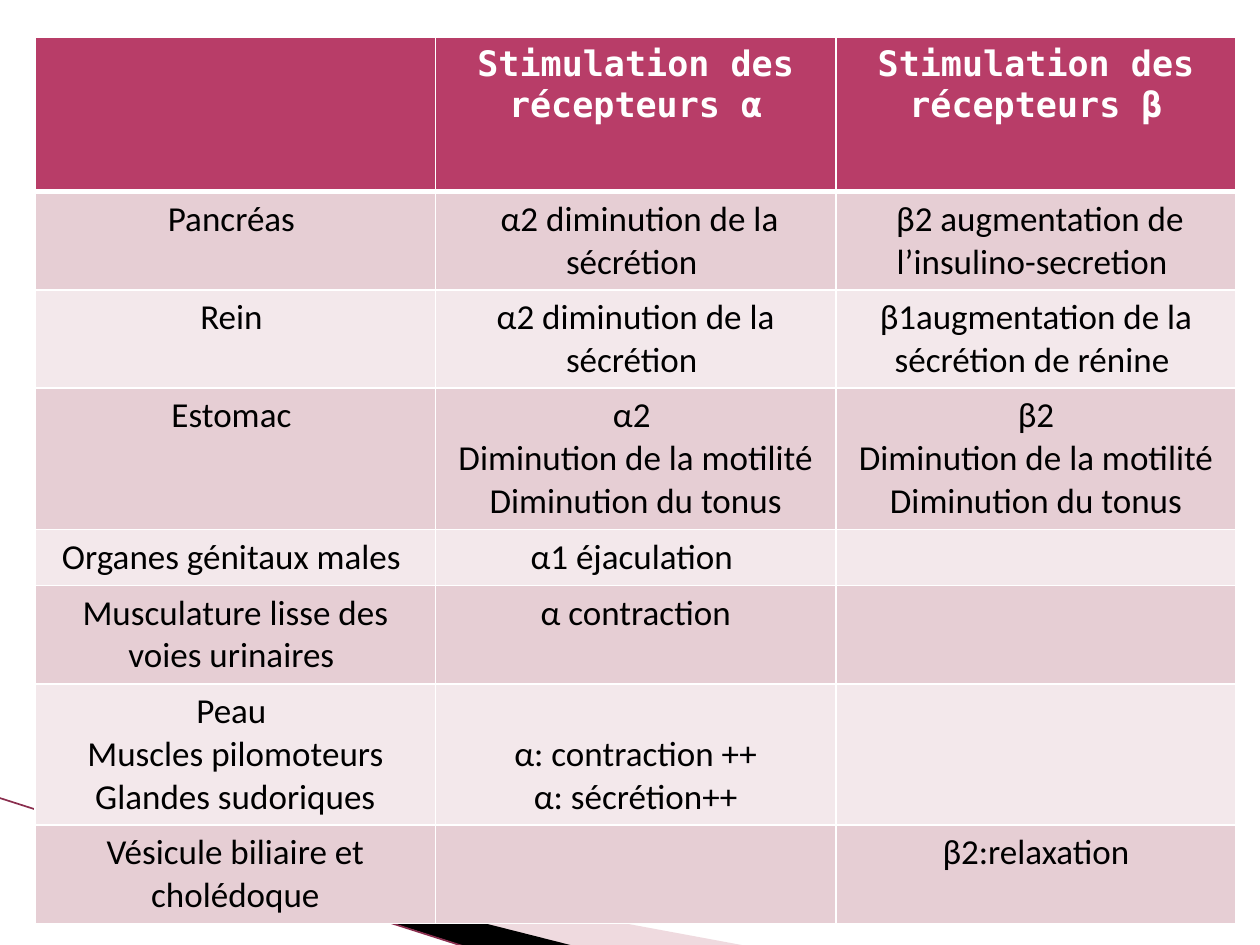
"""Build a slide comparing alpha and beta receptor stimulation by organ."""
from dataclasses import dataclass

from lxml import etree
from pptx import Presentation
from pptx.dml.color import RGBColor
from pptx.enum.shapes import MSO_CONNECTOR
from pptx.enum.text import MSO_ANCHOR, PP_ALIGN
from pptx.oxml.ns import qn
from pptx.util import Cm, Pt

CENTER = PP_ALIGN.CENTER
TOP, BOTTOM = MSO_ANCHOR.TOP, MSO_ANCHOR.BOTTOM
STRAIGHT = MSO_CONNECTOR.STRAIGHT


@dataclass(frozen=True)
class Theme:
    header: str = "B83D68"
    bands: tuple[str, str] = ("E6CED4", "F3E8EB")
    white: str = "FFFFFF"
    black: str = "000000"
    sweep: str = "D8A3AF"
    edge: str = "8A2E4E"
    head_font: str = "DejaVu Sans Mono"
    body_font: str = "Calibri"
    size: int = 20
    rule: float = 1
    head_rule: float = 3


@dataclass(frozen=True)
class Row:
    height: float
    organ: str
    alpha: str = ""
    beta: str = ""
    alpha_anchor: MSO_ANCHOR = TOP


@dataclass(frozen=True)
class Wedge:
    points: tuple[tuple[float, float], ...]
    color: str
    opacity: int = 100


THEME = Theme()
ONE_LINE, TWO_LINES, THREE_LINES = 1.13, 1.98, 2.82
LESS_STOMACH = "Diminution de la motilité\nDiminution du tonus"

ROWS = [
    Row(3.1, "", "Stimulation des récepteurs α", "Stimulation des récepteurs β"),
    Row(TWO_LINES, "Pancréas ", " α2 diminution de la sécrétion ",
        " β2 augmentation de l’insulino-secretion "),
    Row(TWO_LINES, "Rein ", "α2 diminution de la sécrétion ",
        "β1augmentation de la sécrétion de rénine "),
    Row(THREE_LINES, "Estomac ", f"α2 \n{LESS_STOMACH}", f"β2\n{LESS_STOMACH}"),
    Row(ONE_LINE, "Organes génitaux males ", "α1 éjaculation "),
    Row(TWO_LINES, "Musculature lisse des voies urinaires ", "α contraction"),
    Row(THREE_LINES, "Peau \nMuscles pilomoteurs\nGlandes sudoriques",
        "α: contraction ++\nα: sécrétion++", alpha_anchor=BOTTOM),
    Row(TWO_LINES, "Vésicule biliaire et cholédoque", beta="β2:relaxation"),
]

WEDGES = [
    Wedge(((1.4, 16.54), (15.11, 19.08), (11.58, 19.08), (1.4, 16.51)),
          THEME.sweep, 40),
    Wedge(((1.35, 16.48), (11.61, 19.08), (9.45, 19.1), (1.37, 16.51)),
          THEME.black),
]


def rgb(color: str) -> RGBColor:
    return RGBColor.from_string(color)


def add_wedge(slide, wedge: Wedge) -> None:
    start, *rest = [(Cm(x), Cm(y)) for x, y in wedge.points]
    builder = slide.shapes.build_freeform(*start)
    builder.add_line_segments(rest, close=True)
    sp = builder.convert_to_shape()
    sp.shadow.inherit = False
    sp.line.fill.background()
    sp.fill.solid()
    sp.fill.fore_color.rgb = rgb(wedge.color)
    if wedge.opacity < 100:
        clr = sp.element.spPr.find(qn("a:solidFill"))[0]
        etree.SubElement(clr, qn("a:alpha"), val=str(wedge.opacity * 1000))


def add_edge(slide) -> None:
    line = slide.shapes.add_connector(
        STRAIGHT, Cm(-0.03), Cm(16.08), Cm(9.42), Cm(19.1))
    line.line.color.rgb = rgb(THEME.edge)
    line.line.width = Pt(0.95)
    etree.SubElement(line.element.spPr, qn("a:effectLst"))


def set_border(cell, side: str, width: float) -> None:
    tc_pr = cell._tc.get_or_add_tcPr()
    ln = etree.SubElement(tc_pr, qn(f"a:ln{side}"), w=str(Pt(width)))
    fill = etree.SubElement(ln, qn("a:solidFill"))
    etree.SubElement(fill, qn("a:srgbClr"), val=THEME.white)


def fill_cell(cell, text: str, row: int, anchor: MSO_ANCHOR) -> None:
    header = row == 0
    thick = {0: "B", 1: "T"}.get(row)
    for side in "LRTB":
        set_border(cell, side, THEME.head_rule if side == thick else THEME.rule)
    cell.fill.solid()
    cell.fill.fore_color.rgb = rgb(
        THEME.header if header else THEME.bands[(row - 1) % 2])
    cell.vertical_anchor = anchor
    cell.text = text
    for p in cell.text_frame.paragraphs:
        p.alignment = CENTER
        p.font.size = Pt(THEME.size)
        p.font.bold = header
        p.font.name = THEME.head_font if header else THEME.body_font
        p.font.color.rgb = rgb(THEME.white if header else THEME.black)


def add_receptor_table(slide) -> None:
    height = sum(row.height for row in ROWS)
    table = slide.shapes.add_table(
        len(ROWS), 3, Cm(0.71), Cm(0.76), Cm(24.21), Cm(height)).table
    for i, row in enumerate(ROWS):
        table.rows[i].height = Cm(row.height)
        fill_cell(table.cell(i, 0), row.organ, i, TOP)
        fill_cell(table.cell(i, 1), row.alpha, i, row.alpha_anchor)
        fill_cell(table.cell(i, 2), row.beta, i, TOP)


def main() -> None:
    prs = Presentation()
    prs.slide_width, prs.slide_height = Cm(25.4), Cm(19.05)
    slide = prs.slides.add_slide(prs.slide_layouts[6])
    for wedge in WEDGES:
        add_wedge(slide, wedge)
    add_edge(slide)
    add_receptor_table(slide)
    prs.save("out.pptx")


if __name__ == "__main__":
    main()
